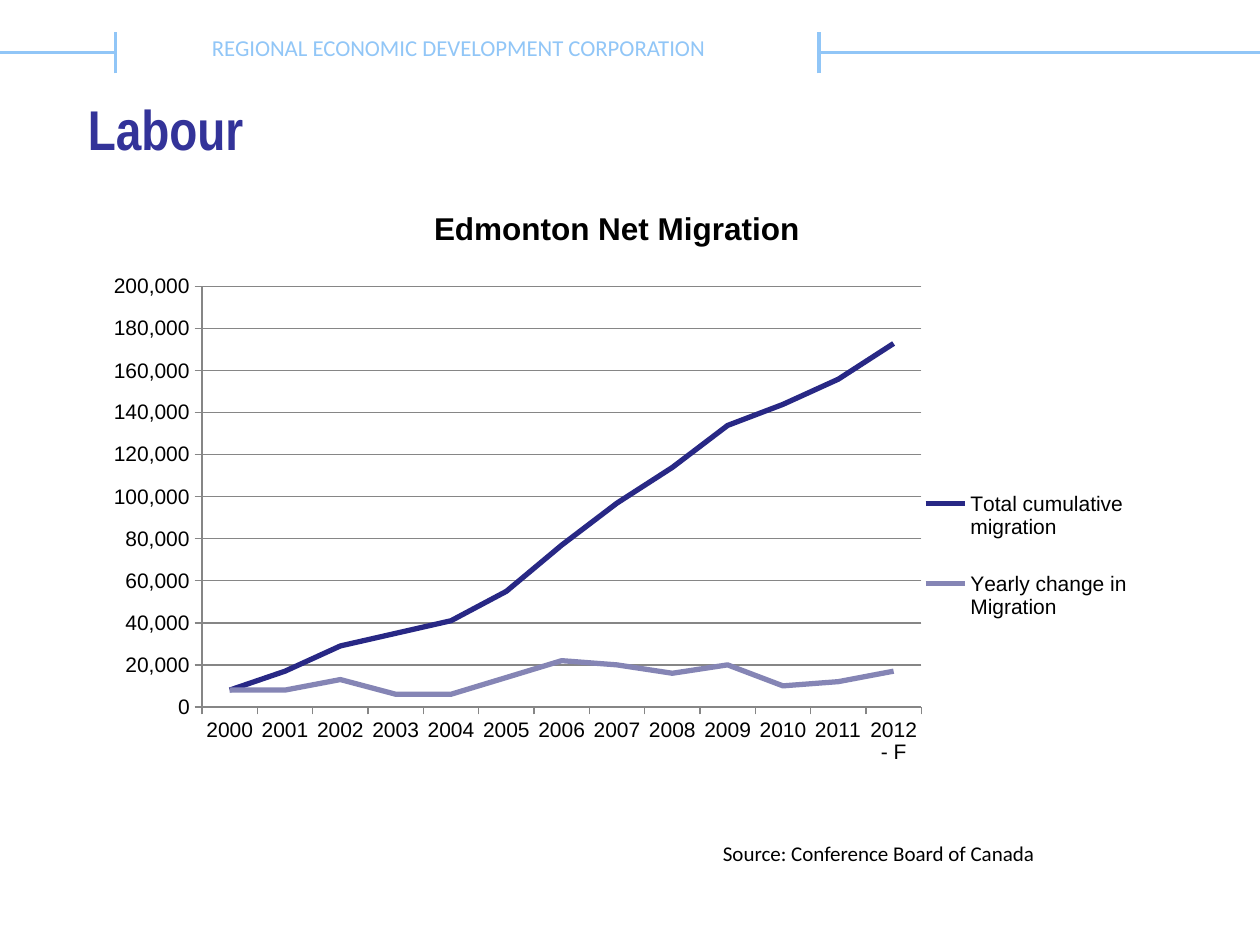
from lxml import etree
from pptx import Presentation
from pptx.chart.data import CategoryChartData
from pptx.dml.color import RGBColor
from pptx.enum.chart import XL_CHART_TYPE as ChartType, XL_LEGEND_POSITION as LegendPosition
from pptx.enum.chart import XL_TICK_LABEL_POSITION as LabelPosition, XL_TICK_MARK as TickMark
from pptx.enum.shapes import MSO_CONNECTOR as Connector
from pptx.enum.text import MSO_ANCHOR as Anchor, MSO_AUTO_SIZE as AutoSize, PP_ALIGN as Align
from pptx.oxml.ns import qn
from pptx.util import Pt

COLORS = {
    "sky": "91C6F7",
    "title": "333399",
    "black": "000000",
    "grid": "868686",
    "total": "282885",
    "yearly": "8585B5",
}
YEARS = [str(year) for year in range(2000, 2012)] + ["2012 - F"]
TOTAL = [8000, 17000, 29000, 35000, 41000, 55000, 77000, 97000, 114000, 134000, 144000, 156000, 173000]
YEARLY = [8000, 8000, 13000, 6000, 6000, 14000, 22000, 20000, 16000, 20000, 10000, 12000, 17000]


class SlideBuilder:
    def __init__(self, slide):
        self.slide = slide

    def color(self, name):
        return RGBColor.from_string(COLORS[name])

    def style_font(self, font, name, size, color, bold=False):
        font.name, font.size, font.bold = name, Pt(size), bold
        font.color.rgb = self.color(color)

    def style_line(self, line, color, width):
        line.color.rgb = self.color(color)
        line.width = Pt(width)

    def title(self, text, left, top, width, height):
        shape = self.slide.shapes.title
        shape.left, shape.top, shape.width, shape.height = map(Pt, (left, top, width, height))
        frame = shape.text_frame
        frame.text = text
        frame.auto_size = AutoSize.NONE
        frame.vertical_anchor = Anchor.TOP
        paragraph = frame.paragraphs[0]
        paragraph.alignment = Align.LEFT
        self.style_font(paragraph.font, "Arial Narrow", 32, "title", True)

    def text(self, text, left, top, width, height, size, color, anchor=Anchor.TOP, wrap=True):
        frame = self.slide.shapes.add_textbox(*map(Pt, (left, top, width, height))).text_frame
        frame.text = text
        frame.word_wrap = wrap
        frame.vertical_anchor = anchor
        self.style_font(frame.paragraphs[0].font, "Calibri", size, color)

    def line(self, start_x, start_y, end_x, end_y):
        points = map(Pt, (start_x, start_y, end_x, end_y))
        connector = self.slide.shapes.add_connector(Connector.STRAIGHT, *points)
        self.style_line(connector.line, "sky", 2)
        etree.SubElement(connector._element.spPr, qn("a:effectLst"))

    def place(self, element, index, target, **fractions):
        for old in element.findall(qn("c:layout")):
            element.remove(old)
        layout = etree.Element(qn("c:layout"))
        manual = etree.SubElement(layout, qn("c:manualLayout"))
        settings = {"layoutTarget": target} if target else {}
        settings.update(xMode="edge", yMode="edge", **fractions)
        for name, value in settings.items():
            etree.SubElement(manual, qn(f"c:{name}")).set("val", str(value))
        element.insert(index, layout)

    def line_chart(self, title, categories, series, left, top, width, height):
        data = CategoryChartData(number_format="#,##0")
        data.categories = categories
        for name, values, _ in series:
            data.add_series(name, values)
        frame = self.slide.shapes.add_chart(ChartType.LINE, *map(Pt, (left, top, width, height)), data)
        chart = frame.chart
        self.style_font(chart.font, "Arial", 12, "black")

        chart.has_title = True
        chart.chart_title.include_in_layout = True
        chart.chart_title.text_frame.text = title
        title_font = chart.chart_title.text_frame.paragraphs[0].font
        self.style_font(title_font, "Arial", 18, "black", True)

        chart.has_legend = True
        chart.legend.position = LegendPosition.RIGHT
        chart.legend.include_in_layout = False
        self.place(chart.legend._element, 1, None, x=0.79, y=0.45, w=0.2, h=0.32)
        plot_area = chart._chartSpace.chart.plotArea
        self.place(plot_area, 0, "inner", x=0.105, y=0.169, w=0.685, h=0.689)

        for axis in (chart.category_axis, chart.value_axis):
            axis.major_tick_mark = TickMark.OUTSIDE
            axis.minor_tick_mark = TickMark.NONE
            self.style_line(axis.format.line, "grid", 0.75)
        chart.category_axis.tick_label_position = LabelPosition.LOW
        values_axis = chart.value_axis
        values_axis.minimum_scale, values_axis.maximum_scale = 0, 200000
        values_axis.major_unit = 20000
        values_axis.tick_labels.number_format = "#,##0"
        values_axis.tick_labels.number_format_is_linked = False
        values_axis.has_major_gridlines = True
        self.style_line(values_axis.major_gridlines.format.line, "grid", 0.75)

        plot = chart.plots[0]
        plot.vary_by_categories = False
        for plotted, (_, _, color) in zip(plot.series, series):
            plotted.smooth = False
            self.style_line(plotted.format.line, color, 3)


def main():
    presentation = Presentation()
    presentation.slide_width, presentation.slide_height = Pt(720), Pt(540)
    builder = SlideBuilder(presentation.slides.add_slide(presentation.slide_layouts[5]))

    for bar_x, edge_x in ((66, 0), (468, 720)):
        builder.line(edge_x, 30, bar_x, 30)
        builder.line(bar_x, 42, bar_x, 18)
    builder.text("REGIONAL ECONOMIC DEVELOPMENT CORPORATION", 114, 12, 318, 30, 13, "sky", Anchor.MIDDLE)
    builder.title("Labour", 43, 50.5, 646.5, 45)
    builder.text("Source: Conference Board of Canada", 406, 476.5, 194, 22, 12, "black", wrap=False)
    series = [
        ("Total cumulative migration", TOTAL, "total"),
        ("Yearly change in Migration", YEARLY, "yearly"),
    ]
    builder.line_chart("Edmonton Net Migration", YEARS, series, 52.5, 105, 600, 348.5)
    presentation.save("out.pptx")


if __name__ == "__main__":
    main()
